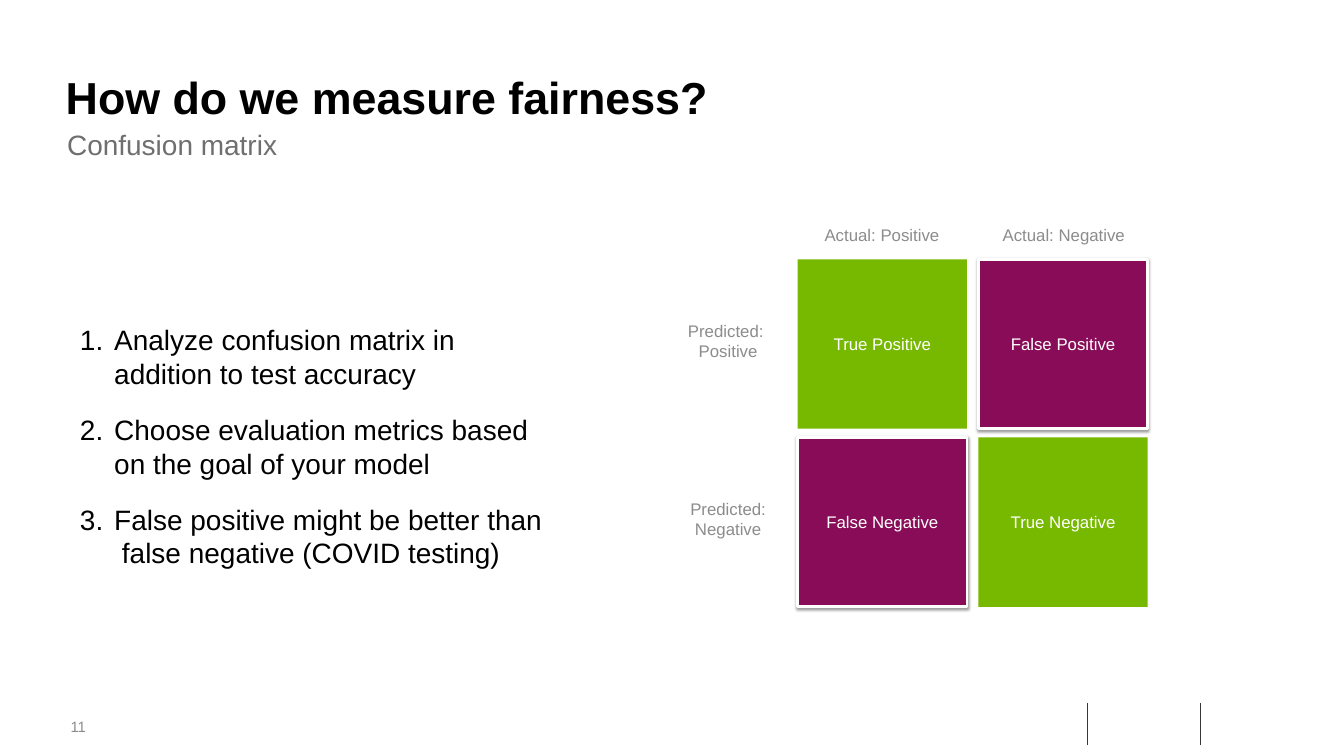
from lxml import etree
from pptx import Presentation
from pptx.dml.color import RGBColor
from pptx.enum.shapes import MSO_CONNECTOR, MSO_SHAPE
from pptx.enum.text import MSO_ANCHOR, PP_ALIGN
from pptx.oxml import parse_xml
from pptx.oxml.ns import nsdecls, qn
from pptx.util import Pt

PX = 9144  # EMU per px, 100 px to the inch
RECT, LINE = MSO_SHAPE.RECTANGLE, MSO_CONNECTOR.STRAIGHT
TOP, MIDDLE, BOTTOM = MSO_ANCHOR.TOP, MSO_ANCHOR.MIDDLE, MSO_ANCHOR.BOTTOM
LEFT, CENTER = PP_ALIGN.LEFT, PP_ALIGN.CENTER
GREEN, PLUM, GREY = "76B900", "890C58", "8C8C8C"
SHADOW = (
    f'<a:effectLst {nsdecls("a")}>'
    '<a:outerShdw blurRad="38100" dist="20320" dir="5400000" rotWithShape="0">'
    '<a:srgbClr val="000000"><a:alpha val="38000"/></a:srgbClr>'
    "</a:outerShdw></a:effectLst>"
)


def rgb(code):
    return RGBColor.from_string(code)


def write(shape, text, size, color, align=LEFT, anchor=MIDDLE, inset=5, wrap=True):
    """Fill a shape with text, one paragraph a line, and return its paragraphs."""
    frame = shape.text_frame
    frame.word_wrap = wrap
    frame.vertical_anchor = anchor
    frame.margin_left = frame.margin_right = inset * PX
    frame.margin_top = frame.margin_bottom = min(inset, 5) * PX
    frame.text = text
    for para in frame.paragraphs:
        para.alignment = align
        for run in para.runs:
            run.font.name = "Arial"
            run.font.size = Pt(size)
            run.font.color.rgb = rgb(color)
    return frame.paragraphs


deck = Presentation()
deck.slide_width, deck.slide_height = 2000 * PX, 1125 * PX
slide = deck.slides.add_slide(deck.slide_layouts[6])
shapes = slide.shapes

# Footer
for x in (1618, 1786):
    rule = shapes.add_connector(LINE, x * PX, 1046 * PX, x * PX, 1109 * PX)
    rule.line.color.rgb = rgb("383838")
    rule.line.width = Pt(1)
    etree.SubElement(rule._element.spPr, qn("a:effectLst"))
number = shapes.add_textbox(105 * PX, 1068 * PX, 59 * PX, 27 * PX)
write(number, "11", 16, GREY, inset=0)

# Heading
title = shapes.add_textbox(88 * PX, 82 * PX, 1818 * PX, 108 * PX)
para = write(title, "How do we measure fairness?", 48, "000000", anchor=BOTTOM, inset=10)[0]
para.line_spacing = 0.9
para.runs[0].font.bold = True
sub = shapes.add_textbox(90 * PX, 190 * PX, 1818 * PX, 96 * PX)
para = write(sub, "Confusion matrix", 30, "6F6F6F", anchor=TOP, inset=10)[0]
para.line_spacing = 0.9

# Confusion matrix
SIDE = 252
cols, rows = (1187, 1456), (386, 651)
names = (("True Positive", "False Positive"), ("False Negative", "True Negative"))
for y, line in zip(rows, names):
    for x, name in zip(cols, line):
        cell = shapes.add_shape(RECT, x * PX, y * PX, SIDE * PX, SIDE * PX)
        cell.shadow.inherit = False
        cell.fill.solid()
        if name.startswith("True"):
            cell.fill.fore_color.rgb = rgb(GREEN)
            cell.line.fill.background()
        else:
            cell.fill.fore_color.rgb = rgb(PLUM)
            cell.line.color.rgb = rgb("FFFFFF")
            cell.line.width = Pt(3)
            props = cell._element.spPr
            props.replace(props.find(qn("a:effectLst")), parse_xml(SHADOW))
        write(cell, name, 18, "FFFFFF", CENTER)

# Matrix labels
labels = (
    ("Actual: Positive", 1221, 329, 183, 40),
    ("Actual: Negative", 1486, 329, 194, 40),
    ("Predicted: \nPositive", 998, 464, 171, 87),
    ("Predicted:\nNegative", 1003, 729, 161, 87),
)
for text, x, y, w, h in labels:
    label = shapes.add_textbox(x * PX, y * PX, w * PX, h * PX)
    write(label, text, 18, GREY, CENTER, wrap=False)

# Numbered advice
steps = (
    "Analyze confusion matrix in addition to test accuracy",
    "Choose evaluation metrics based on the goal of your model",
    "False positive might be better than  false negative (COVID testing)",
)
advice = shapes.add_textbox(114 * PX, 474 * PX, 700 * PX, 380 * PX)
for i, para in enumerate(write(advice, "\n".join(steps), 30, "000000")):
    if i:
        para.space_before = Pt(24)
    props = para._p.get_or_add_pPr()
    props.set("marL", str(51 * PX))
    props.set("indent", str(-51 * PX))
    etree.SubElement(props, qn("a:buFont"), typeface="Arial")
    etree.SubElement(props, qn("a:buAutoNum"), type="arabicPeriod")

deck.save("out.pptx")
